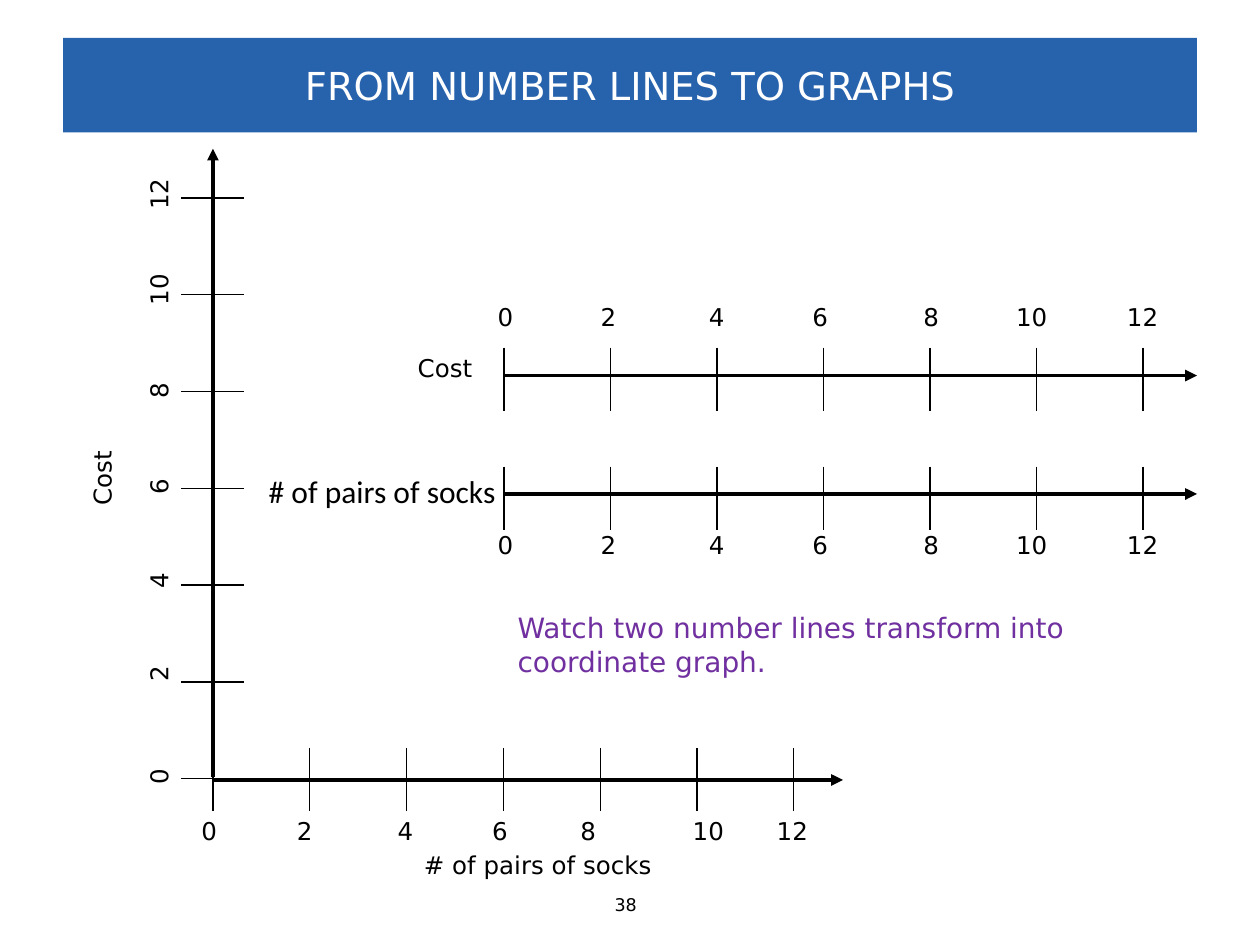
from lxml import etree
from pptx import Presentation
from pptx.dml.color import RGBColor
from pptx.enum import shapes, text
from pptx.oxml import ns
from pptx.util import Pt

BLACK = RGBColor(0, 0, 0)
WHITE = RGBColor(255, 255, 255)
BLUE = RGBColor(0x27, 0x62, 0xAD)
PURPLE = RGBColor(0x70, 0x30, 0xA0)
LEFT, CENTER, RIGHT = text.PP_ALIGN.LEFT, text.PP_ALIGN.CENTER, text.PP_ALIGN.RIGHT

TITLE = "FROM NUMBER LINES TO GRAPHS"
PROMPT = "Watch two number lines transform into coordinate graph."
PAGE = "38"
VALUES = range(0, 13, 2)
TICK = 36
LINE_TABS = (63.4, 125.3, 184.3, 247.8, 305.3, 368.6)

# Boxes are (left, top, width, height); axis is (start x, start y, end x, end y);
# ticks are (first position, step, near edge of the tick marks).
NUMBER_LINES = [
    dict(name="Cost", name_box=(227.5, 198, 49.5, 24.2), name_format=dict(align=RIGHT),
         scale_box=(277.2, 169.2, 406.8, 24.2), tabs=LINE_TABS,
         axis=(288.5, 214.6, 684, 214.6), ticks=(288, 60.85, 198.7)),
    dict(name="# of pairs of socks", name_box=(133.2, 266.4, 157, 29),
         name_format=dict(align=RIGHT, size=18, font="Calibri"),
         scale_box=(277.2, 299.5, 406.8, 24.2), tabs=LINE_TABS,
         axis=(288.5, 282.3, 684, 282.3), ticks=(288, 60.85, 266.6)),
    dict(name="Cost", name_box=(33.1, 258.5, 50.4, 24.2), name_format=dict(rotation=270),
         scale_box=(-94.3, 258.5, 370, 24.2), rotation=270,
         tabs=(63.4, 116.6, 170.6, 225.4, 283, 337.7),
         axis=(121.7, 444.3, 121.7, 85), ticks=(445, -55.32, 103.7)),
    dict(name="# of pairs of socks", name_box=(222.5, 482.4, 157, 24.2),
         name_format=dict(align=RIGHT),
         scale_box=(108, 463, 371.5, 24.2),
         tabs=(59, 116.6, 170.6, 221, 289.7, 337.7),
         axis=(122.4, 445.7, 481.7, 445.7), ticks=(121.7, 55.32, 427.7)),
]


def write(frame, words, size=14, font="DejaVu Sans", color=BLACK, align=LEFT, tabs=()):
    frame.word_wrap = True
    paragraph = frame.paragraphs[0]
    paragraph.alignment = align
    if tabs:
        stops = etree.SubElement(paragraph._p.get_or_add_pPr(), ns.qn("a:tabLst"))
        for stop in tabs:
            etree.SubElement(stops, ns.qn("a:tab"), pos=str(Pt(stop)), algn="ctr")
    run = paragraph.add_run()
    run.text = words
    run.font.size = Pt(size)
    run.font.name = font
    run.font.color.rgb = color


def add_label(parent, words, box, rotation=0, **style):
    label = parent.add_textbox(*map(Pt, box))
    label.rotation = rotation
    write(label.text_frame, words, **style)
    label.text_frame.auto_size = text.MSO_AUTO_SIZE.SHAPE_TO_FIT_TEXT


def add_line(parent, ends, width=0.75, arrow=False):
    line = parent.add_connector(shapes.MSO_CONNECTOR.STRAIGHT, *map(Pt, ends))
    line.line.color.rgb = BLACK
    line.line.width = Pt(width)
    if arrow:
        etree.SubElement(line.line._get_or_add_ln(), ns.qn("a:tailEnd"), type="triangle")
    etree.SubElement(line._element.spPr, ns.qn("a:effectLst"))


def add_number_line(slide, part):
    group = slide.shapes.add_group_shape().shapes
    add_label(group, part["name"], part["name_box"], **part["name_format"])
    add_label(group, "\t".join(map(str, VALUES)), part["scale_box"],
              rotation=part.get("rotation", 0), tabs=part["tabs"])
    first, step, edge = part["ticks"]
    upright = part["axis"][0] == part["axis"][2]
    for i in range(len(VALUES)):
        at = first + i * step
        add_line(group, (edge, at, edge + TICK, at) if upright
                 else (at, edge, at, edge + TICK))
    add_line(group, part["axis"], width=2.25, arrow=True)


def main():
    deck = Presentation()
    deck.slide_width, deck.slide_height = Pt(720), Pt(540)
    slide = deck.slides.add_slide(deck.slide_layouts[5])

    title = slide.shapes.title
    title.left, title.top, title.width, title.height = map(Pt, (36, 21.6, 648, 54))
    title.fill.solid()
    title.fill.fore_color.rgb = BLUE
    title.text_frame.vertical_anchor = text.MSO_ANCHOR.MIDDLE
    title.text_frame.auto_size = text.MSO_AUTO_SIZE.NONE
    write(title.text_frame, TITLE, size=22, color=WHITE, align=CENTER)

    for part in NUMBER_LINES:
        add_number_line(slide, part)
    add_label(slide.shapes, PROMPT, (288.7, 345.6, 380.2, 46), size=16, color=PURPLE)
    add_label(slide.shapes, PAGE, (341.5, 507.6, 32, 19.4), size=10, align=CENTER)
    deck.save("out.pptx")


if __name__ == "__main__":
    main()
